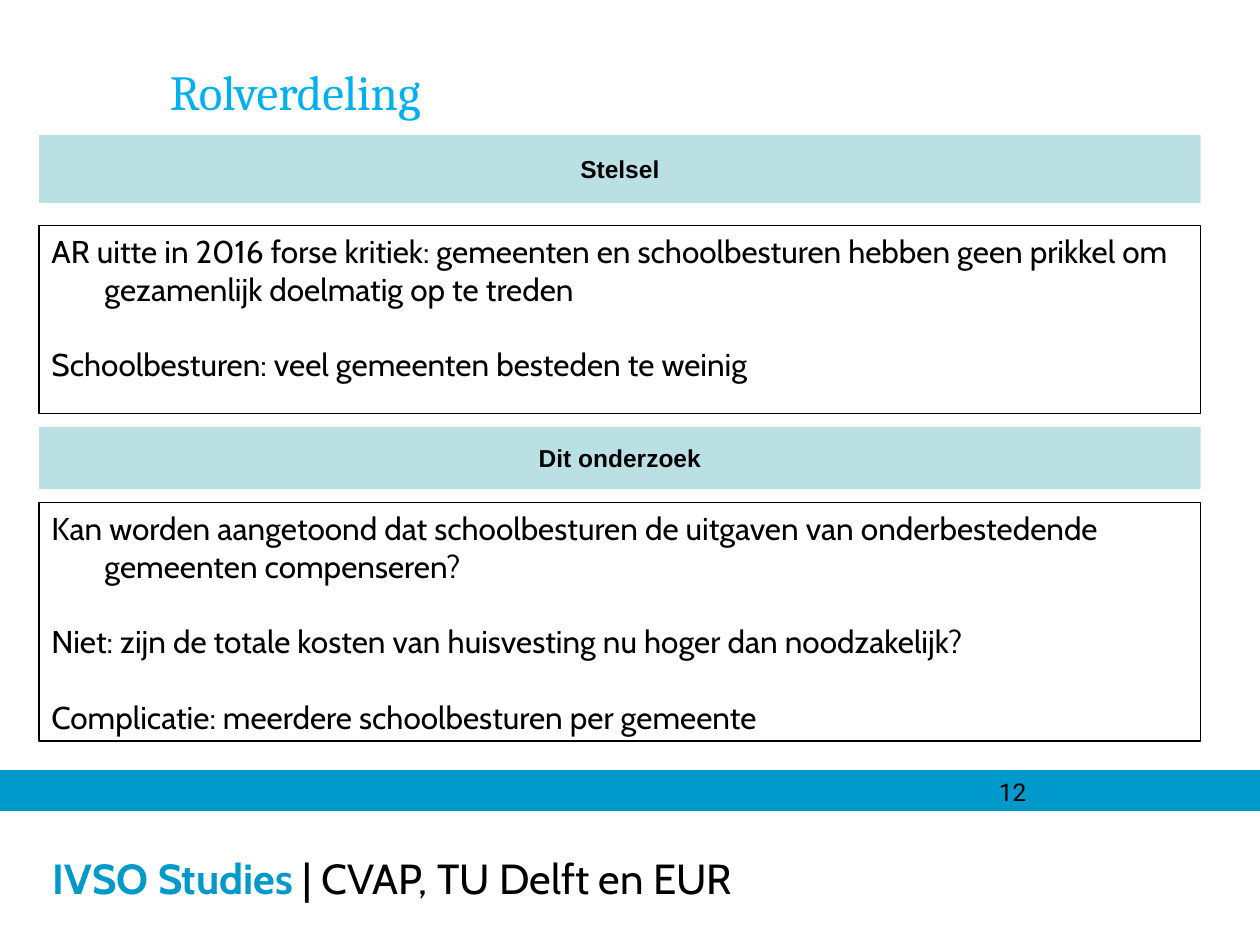
"""Build the slide 'Rolverdeling' with two headed text blocks and a footer."""
from pptx import Presentation
from pptx.dml.color import RGBColor
from pptx.enum.shapes import MSO_SHAPE as Shape
from pptx.enum.text import MSO_ANCHOR as Anchor, PP_ALIGN as Align
from pptx.util import Inches, Pt

BLACK = RGBColor(0x00, 0x00, 0x00)
WHITE = RGBColor(0xFF, 0xFF, 0xFF)
BAND_BLUE = RGBColor(0x00, 0x99, 0xCC)
TITLE_BLUE = RGBColor(0x00, 0xB0, 0xF0)
PALE_TEAL = RGBColor(0xBB, 0xE0, 0xE3)

WIDTH, HEIGHT = 10, 7.5
LEFT, BLOCK_WIDTH = 0.31, 9.22
BAND_TOP, BAND_HEIGHT = 6.12, 0.31
TITLE = "Rolverdeling"
PAGE_NUMBER = "12"
FOOTER = [("IVSO Studies", BAND_BLUE, True), (" | CVAP, TU Delft en EUR", BLACK, False)]
BLOCKS = [
    {
        "heading": "Stelsel", "heading_rows": (1.07, 0.54), "body_rows": (1.79, 1.49),
        "body": [
            "AR uitte in 2016 forse kritiek: gemeenten en schoolbesturen hebben geen "
            "prikkel om gezamenlijk doelmatig op te treden",
            "Schoolbesturen: veel gemeenten besteden te weinig",
        ],
    },
    {
        "heading": "Dit onderzoek", "heading_rows": (3.39, 0.49), "body_rows": (3.99, 1.89),
        "body": [
            "Kan worden aangetoond dat schoolbesturen de uitgaven van "
            "onderbestedende gemeenten compenseren?",
            "Niet: zijn de totale kosten van huisvesting nu hoger dan noodzakelijk?",
            "Complicatie: meerdere schoolbesturen per gemeente",
        ],
    },
]


def add_box(slide, left, top, width, height, fill, line=None, anchor=Anchor.TOP):
    box = slide.shapes.add_shape(
        Shape.RECTANGLE, Inches(left), Inches(top), Inches(width), Inches(height))
    box.shadow.inherit = False
    box.fill.solid()
    box.fill.fore_color.rgb = fill
    if line is None:
        box.line.fill.background()
    else:
        box.line.color.rgb = line
        box.line.width = Pt(0.75)
    box.text_frame.word_wrap = True
    box.text_frame.vertical_anchor = anchor
    return box


def add_label(slide, left, top, width, height):
    label = slide.shapes.add_textbox(
        Inches(left), Inches(top), Inches(width), Inches(height))
    label.text_frame.word_wrap = True
    return label


def add_span(para, text, font, size, color=BLACK, bold=False):
    span = para.add_run()
    span.text = text
    span.font.name = font
    span.font.size = Pt(size)
    span.font.color.rgb = color
    span.font.bold = bold


def set_indent(para, margin, first_line):
    properties = para._p.get_or_add_pPr()
    properties.set("marL", str(Inches(margin)))
    properties.set("indent", str(Inches(first_line)))


def add_footer(slide):
    top = BAND_TOP + BAND_HEIGHT
    footer = add_box(slide, 0, top, WIDTH, HEIGHT - top, WHITE, anchor=Anchor.MIDDLE)
    footer.text_frame.margin_left = Inches(0.42)
    para = footer.text_frame.paragraphs[0]
    para.alignment = Align.LEFT
    for text, color, bold in FOOTER:
        add_span(para, text, "Cabin", 24, color, bold)
    add_box(slide, 0, BAND_TOP, WIDTH, BAND_HEIGHT, BAND_BLUE, BAND_BLUE)
    number = add_label(slide, 7.83, BAND_TOP, 2.08, 0.25)
    add_span(number.text_frame.paragraphs[0], PAGE_NUMBER, "Roboto", 14)


def add_title(slide):
    title = add_label(slide, 0.75, 0.44, 7.8, 0.57)
    para = title.text_frame.paragraphs[0]
    set_indent(para, 0.5, 0)
    add_span(para, TITLE, "Cambria", 28, TITLE_BLUE)


def add_block(slide, block):
    top, height = block["heading_rows"]
    heading = add_box(slide, LEFT, top, BLOCK_WIDTH, height, PALE_TEAL, anchor=Anchor.MIDDLE)
    para = heading.text_frame.paragraphs[0]
    para.alignment = Align.CENTER
    set_indent(para, 0.21, -0.21)
    add_span(para, block["heading"], "Arial", 14, bold=True)

    top, height = block["body_rows"]
    frame = add_box(slide, LEFT, top, BLOCK_WIDTH, height, WHITE, BLACK).text_frame
    for index, text in enumerate(block["body"]):
        para = frame.add_paragraph() if index else frame.paragraphs[0]
        para.alignment = Align.LEFT
        set_indent(para, 0.42, -0.42)
        if index:
            para.space_before = Pt(21.6)
        add_span(para, text, "Cabin", 18)


def main():
    deck = Presentation()
    deck.slide_width, deck.slide_height = Inches(WIDTH), Inches(HEIGHT)
    slide = deck.slides.add_slide(deck.slide_layouts[6])
    add_footer(slide)
    add_title(slide)
    for block in BLOCKS:
        add_block(slide, block)
    deck.save("out.pptx")


if __name__ == "__main__":
    main()
